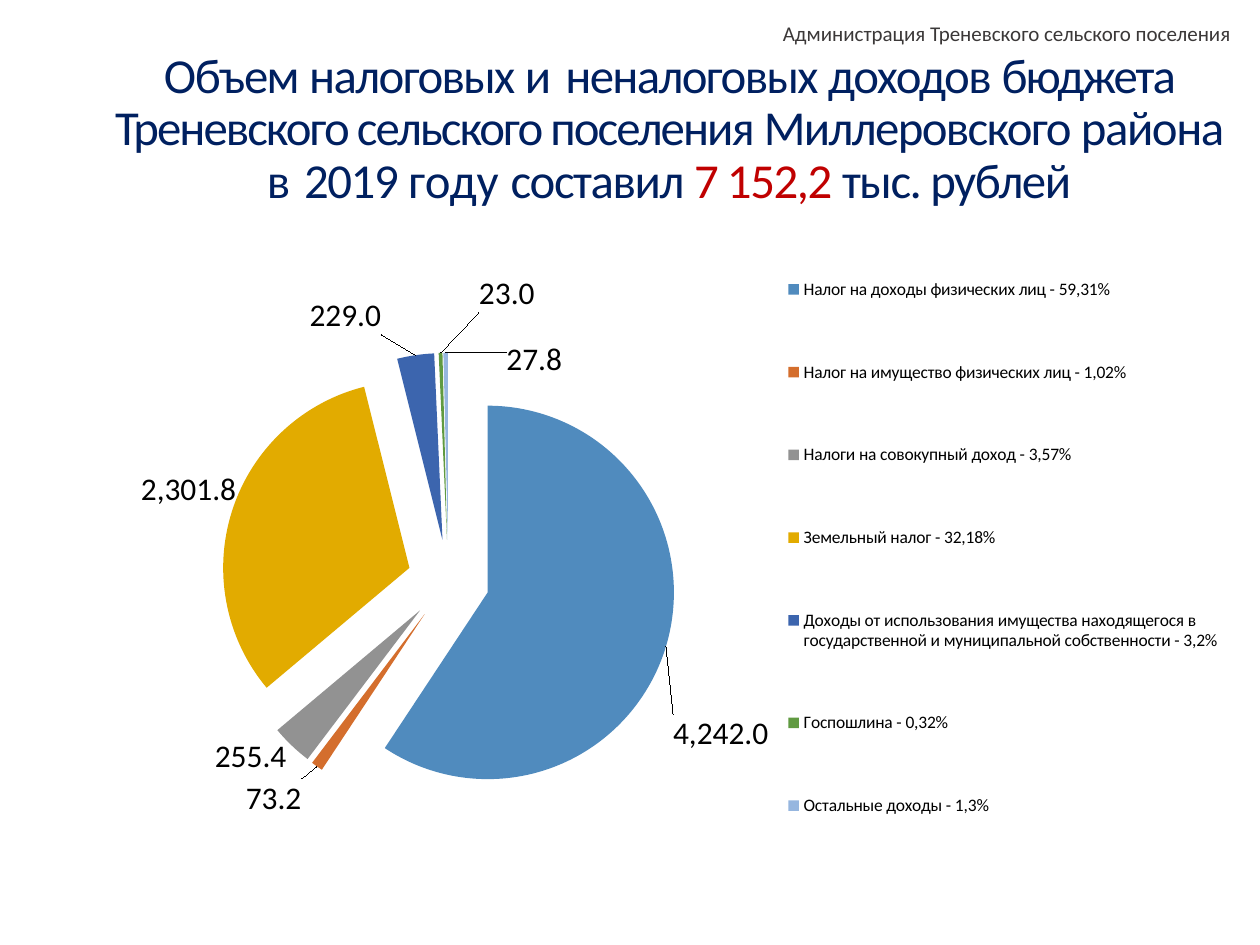
from pptx import Presentation
from pptx.chart.data import CategoryChartData
from pptx.dml.color import RGBColor
from pptx.enum.chart import XL_CHART_TYPE, XL_LABEL_POSITION, XL_LEGEND_POSITION
from pptx.enum.text import MSO_ANCHOR, PP_ALIGN
from pptx.oxml import parse_xml
from pptx.oxml.ns import nsdecls, qn
from pptx.util import Inches, Pt

WIDE, HIGH = Inches(10), Inches(7.5)
FACE = "Calibri"
NAVY, RED, GREY, BLACK = "002060", "C00000", "3B3838", "000000"

TITLE = [
    ("Объем ", -80, NAVY), ("налоговых ", -90, NAVY), ("и ", 90, NAVY),
    ("неналоговых ", -90, NAVY), ("доходов ", -80, NAVY),
    ("бюджета Треневского сельского поселения ", -110, NAVY),
    ("Миллеровского ", -90, NAVY), ("района ", -80, NAVY),
    ("в ", 80, NAVY), ("2019 ", -80, NAVY), ("году ", 20, NAVY),
    ("составил ", -80, NAVY), ("7 152,2 ", -80, RED),
    ("тыс. рублей", -80, NAVY),
]
HEAD = [("Администрация Треневского сельского поселения", 0, GREY)]

SLICES = [
    ("Налог на доходы физических лиц - 59,31%", 4242, "508BBE", 0, 0.1),
    ("Налог на имущество физических лиц - 1,02%", 73.2, "D46E2D", -0.01, 0.01),
    ("Налоги на совокупный доход - 3,57%", 255.4, "929292", 0, -0.02),
    ("Земельный налог - 32,18%", 2301.8, "E2AB00", 0.01, 0),
    ("Доходы от использования имущества находящегося в государственной "
     "и муниципальной собственности - 3,2%", 229, "3C65AE", -0.03, -0.02),
    ("Госпошлина - 0,32%", 23, "609A41", 0.06, -0.05),
    ("Остальные доходы - 1,3%", 27.8, "96B6DF", 0.08, 0.05),
]


def paint(code):
    return RGBColor.from_string(code)


def place(left, top, width, height):
    return (int(WIDE * left / 100), int(HIGH * top / 100),
            int(WIDE * width / 100), int(HIGH * height / 100))


def add_text(slide, box, runs, size, align, anchor, lead=1.0):
    frame = slide.shapes.add_textbox(*box).text_frame
    frame.word_wrap = True
    frame.vertical_anchor = anchor
    frame.margin_left = frame.margin_right = 0
    frame.margin_top = frame.margin_bottom = 0
    para = frame.paragraphs[0]
    para.alignment = align
    para.line_spacing = lead
    for text, gap, tone in runs:
        run = para.add_run()
        run.text = text
        run.font.name = FACE
        run.font.size = Pt(size)
        run.font.color.rgb = paint(tone)
        if gap:
            run.font._element.set("spc", str(gap))


def layout(x, y, width=None, height=None, edge=False, inner=False):
    parts = ['<c:layoutTarget val="inner"/>'] if inner else []
    if edge:
        parts += ['<c:xMode val="edge"/>', '<c:yMode val="edge"/>']
    sides = [("x", x), ("y", y), ("w", width), ("h", height)]
    parts += [f'<c:{key} val="{val}"/>' for key, val in sides if val is not None]
    return parse_xml(f'<c:layout {nsdecls("c")}><c:manualLayout>'
                     f'{"".join(parts)}</c:manualLayout></c:layout>')


def set_font(font, size):
    font.name = FACE
    font.size = Pt(size)
    font.color.rgb = paint(BLACK)


def add_legend(chart):
    chart.has_legend = True
    legend = chart.legend
    legend.position = XL_LEGEND_POSITION.RIGHT
    legend.include_in_layout = False
    set_font(legend.font, 10)
    node = legend._element
    for old in node.findall(qn("c:layout")):
        node.remove(old)
    node.find(qn("c:legendPos")).addnext(
        layout(0.58, 0, 0.41, 1, edge=True))


def add_labels(plot):
    plot.has_data_labels = True
    labels = plot.data_labels
    labels.show_value = True
    labels.show_percentage = False
    labels.number_format = "#,##0.0"
    labels.number_format_is_linked = False
    labels.position = XL_LABEL_POSITION.OUTSIDE_END
    set_font(labels.font, 18)
    node = labels._element
    for old in node.findall(qn("c:showLeaderLines")):
        node.remove(old)
    node.append(parse_xml(f'<c:showLeaderLines {nsdecls("c")} val="1"/>'))


def add_pie(slide, box):
    data = CategoryChartData(number_format="#,##0.0")
    data.categories = [item[0] for item in SLICES]
    data.add_series("Series 1", [item[1] for item in SLICES])
    chart = slide.shapes.add_chart(XL_CHART_TYPE.PIE, *box, data).chart
    chart.has_title = False
    set_font(chart.font, 18)
    add_legend(chart)
    plot = chart.plots[0]
    plot.vary_by_categories = True
    add_labels(plot)
    area = plot._element.getparent()
    for old in area.findall(qn("c:layout")):
        area.remove(old)
    area.insert(0, layout(0.08, 0.1, 0.41, 0.9, edge=True, inner=True))
    series = plot.series[0]
    for spot, (name, value, tone, x, y) in enumerate(SLICES):
        point = series.points[spot]
        point.format.fill.solid()
        point.format.fill.fore_color.rgb = paint(tone)
        point.format.line.fill.background()
        label = point.data_label
        label.position = XL_LABEL_POSITION.OUTSIDE_END
        set_font(label.font, 18)
    group = series._element.find(qn("c:dLbls"))
    for label, item in zip(group.findall(qn("c:dLbl")), SLICES):
        label.find(qn("c:idx")).addnext(layout(item[3], item[4]))
        text = label.find(qn("c:txPr"))
        text.find(qn("a:bodyPr")).set("wrap", "none")
        text.addprevious(parse_xml(
            f'<c:numFmt {nsdecls("c")} formatCode="#,##0.0" sourceLinked="0"/>'))
    leads = group.find(qn("c:showLeaderLines"))
    if leads is None:
        group.append(parse_xml(f'<c:showLeaderLines {nsdecls("c")} val="1"/>'))
    else:
        leads.set("val", "1")
    series._element.find(qn("c:dPt")).addprevious(
        parse_xml(f'<c:explosion {nsdecls("c")} val="22"/>'))


def main():
    deck = Presentation()
    deck.slide_width, deck.slide_height = WIDE, HIGH
    slide = deck.slides.add_slide(deck.slide_layouts[6])
    add_text(slide, place(7.9, 5.4, 90.4, 18.6), TITLE, 27.9,
             PP_ALIGN.CENTER, MSO_ANCHOR.TOP, 0.9)
    add_text(slide, place(35.4, 1.9, 62.3, 3.2), HEAD, 12,
             PP_ALIGN.RIGHT, MSO_ANCHOR.MIDDLE)
    add_pie(slide, place(10.3, 22.9, 88.2, 70.1))
    deck.save("out.pptx")


if __name__ == "__main__":
    main()
